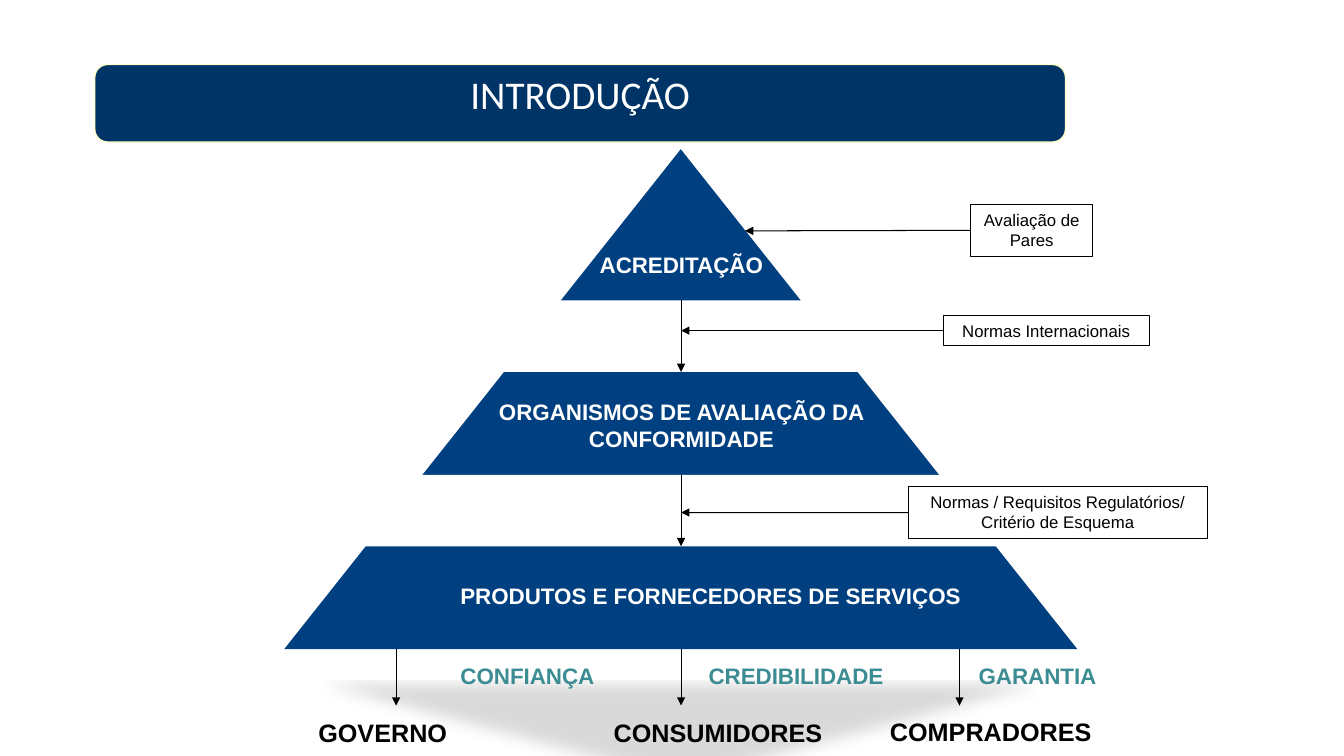
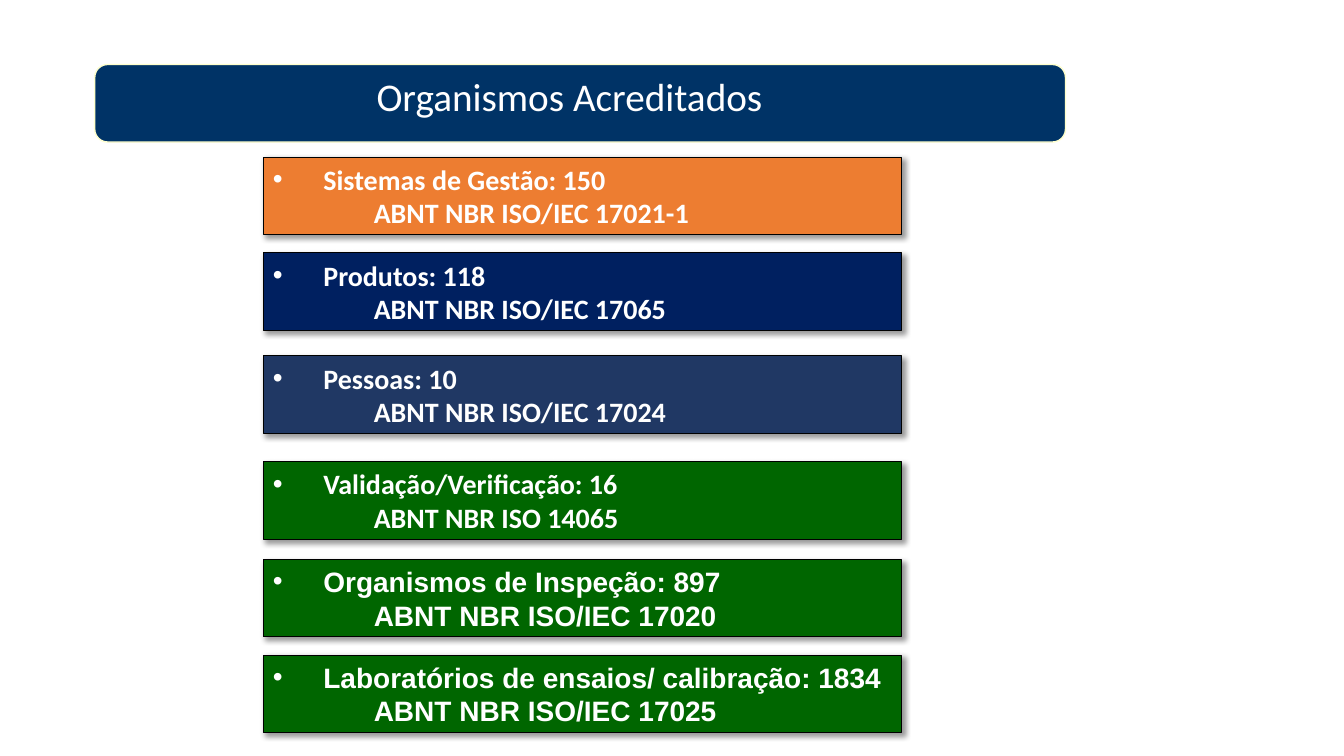
"""Builds two slides on the accreditation pyramid and the accredited bodies."""
from lxml import etree
from pptx import Presentation
from pptx import util as u
from pptx.dml.color import RGBColor
from pptx.enum import shapes, text as t
from pptx.oxml import ns

COLORS = {
    "banner": "003366", "banner_edge": "FFFFCC", "pyramid": "004080",
    "white": "FFFFFF", "black": "000000", "teal": "3C8C93",
    "orange": "ED7D31", "navy": "002060", "slate": "203864", "green": "006600",
}
SHAPE = shapes.MSO_SHAPE
LEFT, CENTER = t.PP_ALIGN.LEFT, t.PP_ALIGN.CENTER
TOP, MIDDLE = t.MSO_ANCHOR.TOP, t.MSO_ANCHOR.MIDDLE


def rgb(name):
    return RGBColor.from_string(COLORS[name])


def add_xml(parent, tag, **attributes):
    child = etree.SubElement(parent, ns.qn(tag))
    for key, value in attributes.items():
        child.set(key, str(value))
    return child


def write(frame, text, size=16, font="Arial", color="white", bold=False,
          align=CENTER, anchor=TOP, wrap=True, bullet_indent=0):
    frame.word_wrap = wrap
    frame.vertical_anchor = anchor
    for index, line in enumerate(text.split("\n")):
        para = frame.add_paragraph() if index else frame.paragraphs[0]
        para.alignment = align
        if bullet_indent:
            props = para._p.get_or_add_pPr()
            props.set("marL", str(u.Pt(bullet_indent * (index + 1))))
            props.set("indent", str(0 if index else -u.Pt(bullet_indent)))
            if index == 0:
                add_xml(props, "a:buFont", typeface="Arial")
                add_xml(props, "a:buChar", char="•")
        span = para.add_run()
        span.text = line
        span.font.size = u.Pt(size)
        span.font.name = font
        span.font.bold = bold
        span.font.color.rgb = rgb(color)


class SlideMaker:
    def __init__(self):
        self.deck = Presentation()
        self.deck.slide_width = u.Pt(960)
        self.deck.slide_height = u.Pt(540)
        self.page = None

    def new_page(self, title, left, top, width):
        self.page = self.deck.slides.add_slide(self.deck.slide_layouts[6])
        self.shape(SHAPE.ROUNDED_RECTANGLE, 67.7, 46.1, 693.4, 55.4,
                   fill="banner", line="banner_edge", weight=1)
        self.label(title, left, top, width, 58, size=28, font="Calibri")

    def shape(self, kind, left, top, width, height, fill=None, line=None,
              weight=0.75):
        shape = self.page.shapes.add_shape(
            kind, u.Pt(left), u.Pt(top), u.Pt(width), u.Pt(height))
        shape.shadow.inherit = False
        if fill:
            shape.fill.solid()
            shape.fill.fore_color.rgb = rgb(fill)
        else:
            shape.fill.background()
        if line:
            shape.line.color.rgb = rgb(line)
            shape.line.width = u.Pt(weight)
        else:
            shape.line.fill.background()
        return shape

    def shadow(self, shape, alpha, blur, distance, angle, **scale):
        effects = shape._element.spPr.find(ns.qn("a:effectLst"))
        outer = add_xml(effects, "a:outerShdw", blurRad=u.Pt(blur),
                        dist=u.Pt(distance), dir=angle * 60000,
                        rotWithShape=0, **scale)
        color = add_xml(outer, "a:srgbClr", val=COLORS["black"])
        add_xml(color, "a:alpha", val=alpha * 1000)

    def label(self, text, left, top, width, height, **style):
        box = self.page.shapes.add_textbox(
            u.Pt(left), u.Pt(top), u.Pt(width), u.Pt(height))
        write(box.text_frame, text, **style)

    def note(self, text, left, top, width, height, **style):
        box = self.shape(SHAPE.RECTANGLE, left, top, width, height,
                         line="black")
        write(box.text_frame, text, size=12, color="black", **style)

    def arrow(self, x1, y1, x2, y2):
        arrow = self.page.shapes.add_connector(
            shapes.MSO_CONNECTOR.STRAIGHT,
            u.Pt(x1), u.Pt(y1), u.Pt(x2), u.Pt(y2))
        arrow.line.color.rgb = rgb("black")
        arrow.line.width = u.Pt(0.75)
        add_xml(arrow.line._get_or_add_ln(), "a:tailEnd", type="triangle")
        add_xml(arrow._element.spPr, "a:effectLst")

    def bullet_card(self, text, top, fill, font):
        card = self.shape(SHAPE.RECTANGLE, 187.9, top, 455.8, 55.4,
                          fill=fill, line="black")
        self.shadow(card, alpha=40, blur=4, distance=3, angle=45)
        write(card.text_frame, text, size=20, font=font, bold=True,
              align=LEFT, anchor=MIDDLE, bullet_indent=36)


def build_pyramid(maker):
    maker.new_page("INTRODUÇÃO", 55.4, 46.8, 717.8)
    axis, base, gap = 486.5, 463.7, 51.1
    pyramid = maker.shape(SHAPE.ISOSCELES_TRIANGLE, 203, 106.6, 566.6, 357.1,
                          fill="pyramid")
    maker.shadow(pyramid, alpha=15, blur=12, distance=25, angle=90,
                 sx=90000, sy=-19000)

    for top, width in ((214.6, 323.3), (339.1, 481.7)):
        maker.shape(SHAPE.RECTANGLE, axis - width / 2, top, width, gap,
                    fill="white")
        maker.arrow(axis, top, axis, top + gap)

    for text, left, top, width, height in (
            ("ACREDITAÇÃO", 420.5, 176, 132.5, 26.6),
            ("ORGANISMOS DE AVALIAÇÃO DA CONFORMIDADE",
             322.6, 280.8, 328.3, 46.1),
            ("PRODUTOS E FORNECEDORES DE SERVIÇOS",
             305, 412.6, 405.4, 26.6)):
        maker.label(text, left, top, width, height, bold=True)

    for text, left, top, width, height, tip, tip_y in (
            ("Avaliação de\nPares", 693.4, 146.2, 87.1, 36.7, 532.1, 164.9),
            ("Normas Internacionais", 673.9, 225.4, 146.9, 21.6, axis, 236.2),
            ("Normas / Requisitos Regulatórios/ Critério de Esquema",
             648.7, 347.8, 213.8, 36.7, axis, 366.1)):
        maker.note(text, left, top, width, height)
        maker.arrow(left, top + height / 2, tip, tip_y)

    for x in (283, axis, 685.4):
        maker.arrow(x, base, x, 504)

    for text, left, top, width in (
            ("GOVERNO", 220.3, 509, 107.3),
            ("CONSUMIDORES", 431.3, 509, 164.9),
            ("COMPRADORES", 628.6, 508.3, 159.8)):
        maker.label(text, left, top, width, 28.8, size=18, color="black",
                    bold=True, align=LEFT, wrap=False)

    for text, left, width in (
            ("CONFIANÇA", 321.8, 111.6),
            ("CREDIBILIDADE", 499, 140.4),
            ("GARANTIA", 691.9, 99.4)):
        maker.label(text, left, 469.4, width, 26.6, color="teal", bold=True,
                    align=LEFT, wrap=False)


def build_bodies(maker):
    maker.new_page("Organismos Acreditados", 55.4, 48.2, 702.7)
    for name, standard, top, fill, font in (
            ("Sistemas de Gestão: 150", "ISO/IEC 17021-1",
             112.3, "orange", "Calibri"),
            ("Produtos: 118", "ISO/IEC 17065", 180.7, "navy", "Calibri"),
            ("Pessoas: 10", "ISO/IEC 17024", 254.2, "slate", "Calibri"),
            ("Validação/Verificação: 16", "ISO 14065",
             329.8, "green", "Calibri"),
            ("Organismos de Inspeção: 897", "ISO/IEC 17020",
             399.6, "green", "Arial"),
            ("Laboratórios de ensaios/ calibração: 1834", "ISO/IEC 17025",
             468, "green", "Arial")):
        maker.bullet_card(f"{name}\nABNT NBR {standard}", top, fill, font)


def main():
    maker = SlideMaker()
    build_pyramid(maker)
    build_bodies(maker)
    maker.deck.save("out.pptx")


if __name__ == "__main__":
    main()
